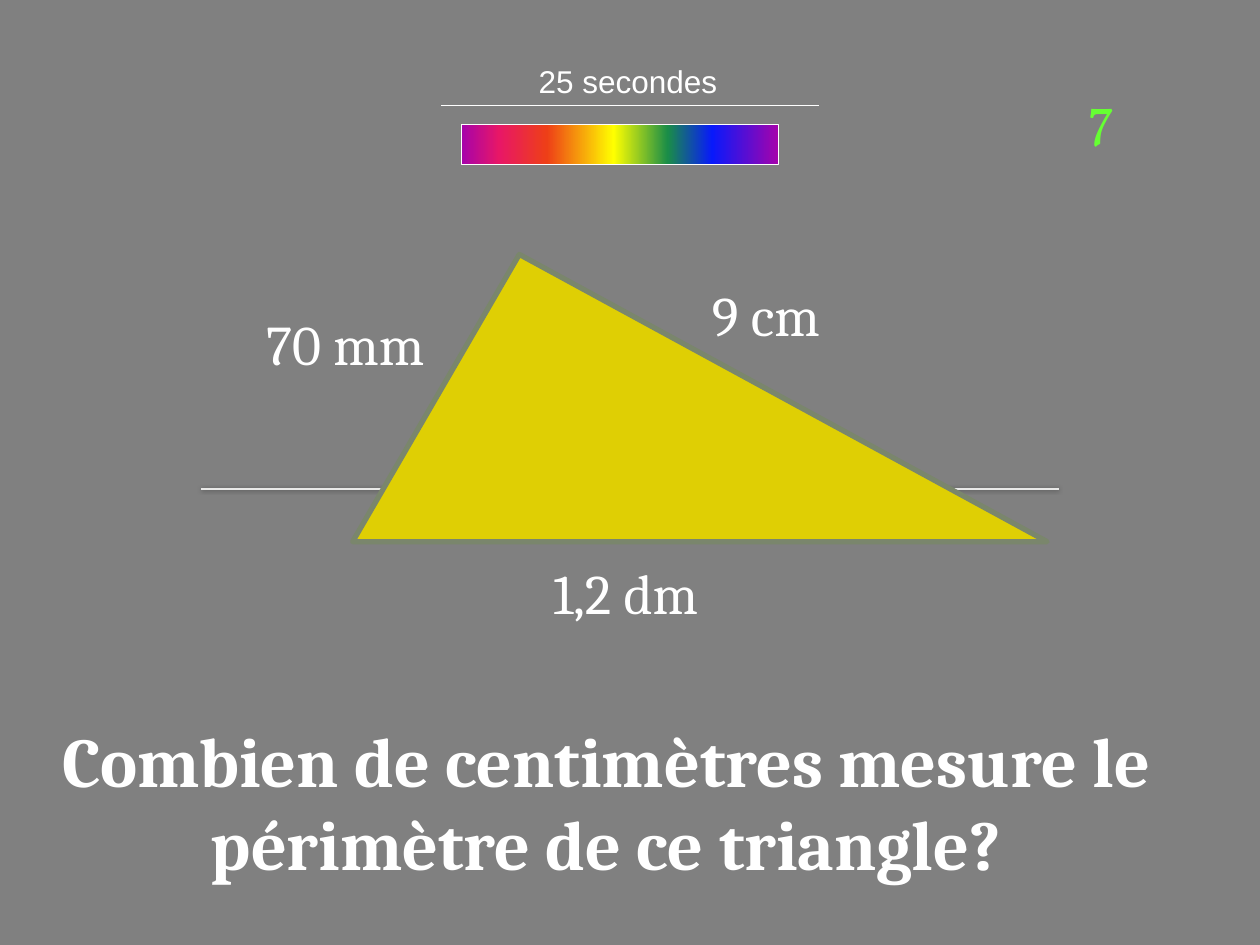
"""Build a quiz slide asking for the perimeter of a triangle."""
from lxml.etree import SubElement
from pptx import Presentation
from pptx.dml.color import RGBColor
from pptx.enum.shapes import MSO_CONNECTOR, MSO_SHAPE
from pptx.enum.text import MSO_ANCHOR, PP_ALIGN
from pptx.oxml.ns import qn
from pptx.util import Cm, Pt

BACKGROUND = "808080"
WHITE = "FFFFFF"
RAINBOW = [(0, "A603AB"), (12, "E81766"), (27, "EE3F17"), (48, "FFFF00"),
           (65, "1A8D48"), (79, "0819FB"), (100, "A603AB")]
LINES = [
    ((4.06, 12.32), 9.86, "E9E9E8", True),
    ((13.08, 21.34), 9.86, "E9E9E8", True),
    ((8.89, 16.51), 2.13, WHITE, False),
]
TIMER_BAR = (9.3, 2.51, 6.4, 0.81)
TRIANGLE = (7.11, 5.13, 14, 5.79)
SIDE = {"size": 32, "name": "Cambria"}
TEXTS = [
    ("25 secondes", (8.89, 1.12, 7.54, 1.02), {"size": 18, "name": "Arial", "align": PP_ALIGN.CENTER}),
    ("Combien de centimètres mesure le périmètre de ce triangle?", (0.51, 14.33, 23.42, 3.68),
     {"size": 40, "name": "Cambria", "bold": True, "align": PP_ALIGN.CENTER, "fill": BACKGROUND}),
    ("7", (20.7, 1.12, 3, 2.39),
     {"size": 32, "name": "Vollkorn", "color": "66FF33", "align": PP_ALIGN.CENTER,
      "anchor": MSO_ANCHOR.MIDDLE, "inset": 0}),
    ("9 cm", (14.1, 5.54, 4.19, 1.63), SIDE),
    ("70 mm", (5.11, 6.12, 4.39, 1.63), SIDE),
    ("1,2 dm", (10.9, 11.13, 3.84, 1.63), {**SIDE, "wrap": False}),
]


def paint(color_format, color):
    color_format.rgb = RGBColor.from_string(color)


def fill_solid(fill, color):
    fill.solid()
    paint(fill.fore_color, color)


def add_line(page, ends, height, color, shadowed):
    start, end = ends
    line = page.shapes.add_connector(MSO_CONNECTOR.STRAIGHT, Cm(start), Cm(height), Cm(end), Cm(height))
    paint(line.line.color, color)
    line.line.width = Pt(0.75)
    effects = SubElement(line._element.spPr, qn("a:effectLst"))
    if shadowed:
        shadow = SubElement(effects, qn("a:outerShdw"), blurRad=str(Pt(2.5)), dist="0", dir="2700000")
        shade = SubElement(shadow, qn("a:srgbClr"), val="000000")
        SubElement(shade, qn("a:alpha"), val="55000")


def add_outlined(page, kind, area, color, width):
    shape = page.shapes.add_shape(kind, *map(Cm, area))
    shape.shadow.inherit = False
    paint(shape.line.color, color)
    shape.line.width = Pt(width)
    return shape


def add_timer_bar(page):
    bar = add_outlined(page, MSO_SHAPE.RECTANGLE, TIMER_BAR, WHITE, 0.75)
    bar.fill.gradient()
    bar.fill.gradient_angle = 0
    stops = bar._element.spPr.find(qn("a:gradFill")).find(qn("a:gsLst"))
    for stop in list(stops):
        stops.remove(stop)
    for percent, color in RAINBOW:
        stop = SubElement(stops, qn("a:gs"), pos=str(percent * 1000))
        SubElement(stop, qn("a:srgbClr"), val=color)


def add_triangle(page):
    triangle = add_outlined(page, MSO_SHAPE.ISOSCELES_TRIANGLE, TRIANGLE, "7A866C", 3)
    triangle.adjustments[0] = 0.24
    fill_solid(triangle.fill, "DFCF04")


def add_text(page, text, area, style):
    box = page.shapes.add_textbox(*map(Cm, area))
    if "fill" in style:
        fill_solid(box.fill, style["fill"])
    frame = box.text_frame
    frame.word_wrap = style.get("wrap", True)
    frame.vertical_anchor = style.get("anchor", MSO_ANCHOR.TOP)
    if "inset" in style:
        for side in ("left", "top", "right", "bottom"):
            setattr(frame, f"margin_{side}", Cm(style["inset"]))
    para = frame.paragraphs[0]
    para.alignment = style.get("align", PP_ALIGN.LEFT)
    span = para.add_run()
    span.text = text
    font_values = {"name": style["name"], "size": Pt(style["size"]), "bold": style.get("bold", False)}
    for attribute, value in font_values.items():
        setattr(span.font, attribute, value)
    paint(span.font.color, style.get("color", WHITE))


def main():
    deck = Presentation()
    deck.slide_width, deck.slide_height = Cm(25.4), Cm(19.05)
    page = deck.slides.add_slide(deck.slide_layouts[6])
    fill_solid(page.background.fill, BACKGROUND)
    for line in LINES:
        add_line(page, *line)
    add_timer_bar(page)
    add_triangle(page)
    for text in TEXTS:
        add_text(page, *text)
    deck.save("out.pptx")


if __name__ == "__main__":
    main()
